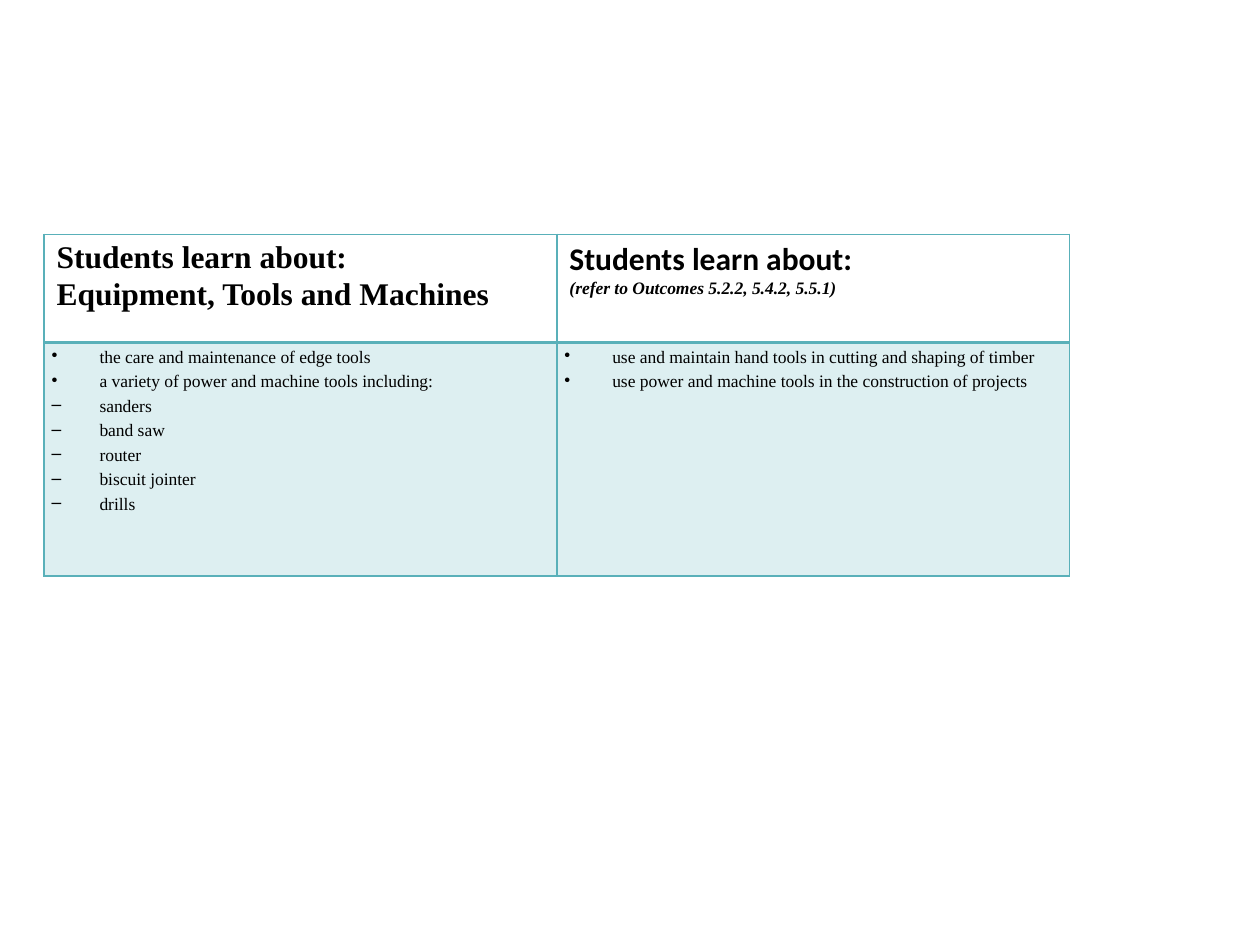
from lxml import etree
from pptx import Presentation, util as u
from pptx.dml.color import RGBColor
from pptx.oxml.ns import qn

TEAL, BLACK, WHITE = "59B0B9", "000000", "FFFFFF"
SERIF, SANS = "Times New Roman", "Calibri"

# Each heading line: text, font, size, italic, space before
HEADINGS = [
    [("Students learn about:", SERIF, 18, False, 0),
     ("Equipment, Tools and Machines", SERIF, 18, False, 1)],
    [("Students learn about:", SANS, 18, False, 0),
     ("(refer to Outcomes 5.2.2, 5.4.2, 5.5.1)", SERIF, 10, True, 0)],
]
TOPICS = [
    [("•", "the care and maintenance of edge tools"),
     ("•", "a variety of power and machine tools including:"),
     ("–", "sanders"),
     ("–", "band saw"),
     ("–", "router"),
     ("–", "biscuit jointer"),
     ("–", "drills")],
    [("•", "use and maintain hand tools in cutting and shaping of timber"),
     ("•", "use power and machine tools in the construction of projects")],
]


def colour(value):
    return RGBColor.from_string(value)


def add_element(parent, tag, **attributes):
    return etree.SubElement(parent, qn(tag), attributes)


def set_borders(cell, top=1, bottom=1):
    properties = cell._tc.get_or_add_tcPr()
    for side, width in (("L", 1), ("R", 1), ("T", top), ("B", bottom)):
        line = add_element(properties, f"a:ln{side}", w=str(u.Pt(width)))
        fill = add_element(line, "a:solidFill")
        add_element(fill, "a:srgbClr", val=TEAL)


def set_fill(cell, value, opacity=100):
    cell.fill.solid()
    cell.fill.fore_color.rgb = colour(value)
    if opacity < 100:
        shade = cell._tc.tcPr.find(".//" + qn("a:solidFill") + "[last()]/" + qn("a:srgbClr"))
        shade = cell._tc.tcPr.find(qn("a:solidFill")).find(qn("a:srgbClr"))
        add_element(shade, "a:alpha", val=str(opacity * 1000))


def add_paragraph(frame, index, words, font, size, bold=False, italic=False):
    para = frame.paragraphs[0] if index == 0 else frame.add_paragraph()
    para.text = words
    style = para.runs[0].font
    style.name, style.size = font, u.Pt(size)
    style.bold, style.italic = bold, italic
    style.color.rgb = colour(BLACK)
    return para


def add_bullet(para, mark):
    properties = para._p.get_or_add_pPr()
    properties.set("marL", str(u.Inches(0.38)))
    properties.set("indent", str(u.Inches(-0.38)))
    add_element(properties, "a:buChar", char=mark)
    tabs = add_element(properties, "a:tabLst")
    for stop in (0.25,) if mark == "•" else (0.25, 0.5):
        add_element(tabs, "a:tab", pos=str(u.Inches(stop)), algn="l")


def fill_heading(cell, lines):
    set_borders(cell, bottom=2)
    set_fill(cell, WHITE)
    for index, (words, font, size, italic, before) in enumerate(lines):
        para = add_paragraph(cell.text_frame, index, words, font, size, True, italic)
        if before:
            para.space_before = u.Pt(before)


def fill_topics(cell, items):
    set_borders(cell, top=2)
    set_fill(cell, TEAL, opacity=20)
    cell.margin_left = cell.margin_right = u.Inches(0.06)
    cell.margin_top = cell.margin_bottom = 0
    for index, (mark, words) in enumerate(items):
        para = add_paragraph(cell.text_frame, index, words, SERIF, 10)
        para.line_spacing = u.Pt(14)
        add_bullet(para, mark)


def add_outcomes_table(page, left, top, width, row_heights):
    table = page.shapes.add_table(2, 2, left, top, width, sum(row_heights)).table
    table.horz_banding = False
    for row, height in zip(table.rows, row_heights):
        row.height = height
    for column, (heading, topics) in enumerate(zip(HEADINGS, TOPICS)):
        table.columns[column].width = width // 2
        fill_heading(table.cell(0, column), heading)
        fill_topics(table.cell(1, column), topics)


def main():
    deck = Presentation()
    deck.slide_width, deck.slide_height = u.Inches(10), u.Inches(7.5)
    page = deck.slides.add_slide(deck.slide_layouts[6])
    add_outcomes_table(page, u.Inches(0.35), u.Inches(1.86), u.Inches(8.14),
                       [u.Inches(0.86), u.Inches(1.85)])
    deck.save("out.pptx")


if __name__ == "__main__":
    main()
